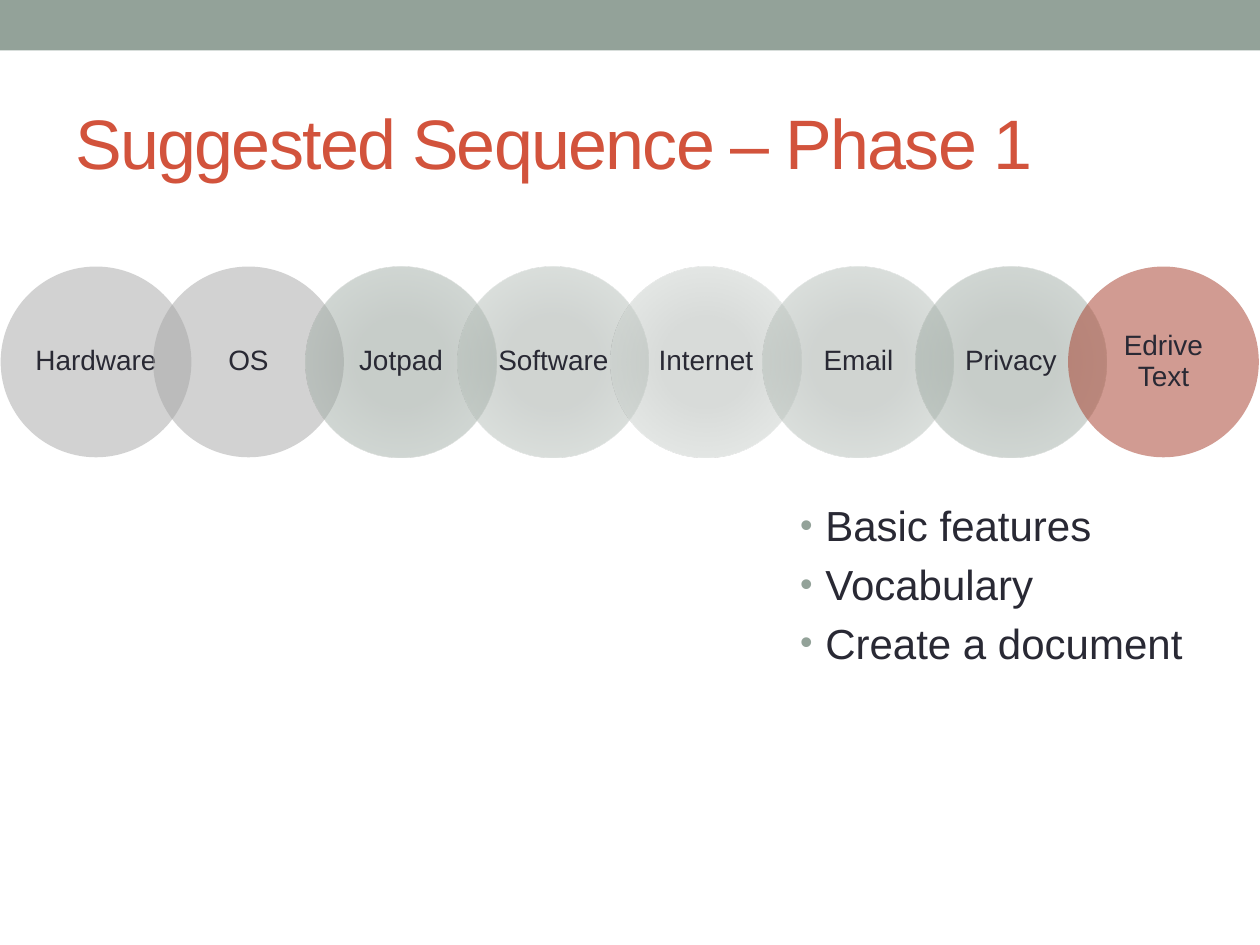
from dataclasses import dataclass

from pptx import Presentation
from pptx.dml.color import RGBColor
from pptx.enum.shapes import MSO_SHAPE
from pptx.enum.text import MSO_ANCHOR, PP_ALIGN
from pptx.oxml import parse_xml
from pptx.oxml.ns import nsdecls
from pptx.util import Pt


@dataclass(frozen=True)
class Theme:
    font: str = "Arial"
    title: str = "D2533C"
    text: str = "292934"
    sage: str = "93A299"
    gray: tuple = ("A6A6A6",)
    red: tuple = ("A53926",)
    # Radial gradients, from centre to rim
    dark: tuple = ("919D96", "929D96", "A3AFA8", "ACB5B0")
    medium: tuple = ("A3ACA6", "A3ABA6", "B6BFB9", "C0C7C2")
    light: tuple = ("B4BAB6", "B4BAB6", "C9CFCB", "D3D8D5")
    title_size: int = 40
    body_size: int = 24
    label_size: int = 16


theme = Theme()


def style_text(paragraph, size, color):
    for run in paragraph.runs:
        run.font.name = theme.font
        run.font.size = Pt(size)
        run.font.color.rgb = RGBColor.from_string(color)


def translucent_fill(colors):
    """Half-transparent fill: solid for one colour, radial for four."""
    tints = [f'<a:srgbClr val="{color}"><a:alpha val="50000"/></a:srgbClr>' for color in colors]
    if len(tints) == 1:
        return parse_xml(f'<a:solidFill {nsdecls("a")}>{tints[0]}</a:solidFill>')
    stops = "".join(f'<a:gs pos="{position * 1000}">{tint}</a:gs>'
                    for position, tint in zip((0, 34, 70, 100), tints))
    return parse_xml(
        f'<a:gradFill {nsdecls("a")} rotWithShape="1"><a:gsLst>{stops}</a:gsLst>'
        '<a:path path="circle"><a:fillToRect l="100000" t="100000" r="100000" b="100000"/>'
        '</a:path></a:gradFill>')


presentation = Presentation()
presentation.slide_width, presentation.slide_height = Pt(720), Pt(540)
slide = presentation.slides.add_slide(presentation.slide_layouts[1])

# Top band
band = slide.shapes.add_shape(MSO_SHAPE.RECTANGLE, 0, 0, Pt(720), Pt(28.8))
band.shadow.inherit = False
band.fill.solid()
band.fill.fore_color.rgb = RGBColor.from_string(theme.sage)
band.line.fill.background()

# Title
title = slide.shapes.title
title.left, title.top, title.width, title.height = Pt(36), Pt(41.76), Pt(648), Pt(77.76)
title.text_frame.text = "Suggested Sequence – Phase 1"
title.text_frame.vertical_anchor = MSO_ANCHOR.MIDDLE
heading = title.text_frame.paragraphs[0]
heading.alignment = PP_ALIGN.LEFT
style_text(heading, theme.title_size, theme.title)
heading.runs[0].font._element.set("spc", "-100")

# Chain of overlapping circles
steps = [
    ("Hardware", theme.gray),
    ("OS", theme.gray),
    ("Jotpad", theme.dark),
    ("Software", theme.medium),
    ("Internet", theme.light),
    ("Email", theme.medium),
    ("Privacy", theme.dark),
    ("Edrive Text", theme.red),
]
diameter, pitch = 109, 87.14
for index, (label, colors) in enumerate(steps):
    circle = slide.shapes.add_shape(MSO_SHAPE.OVAL, Pt(0.36 + index * pitch), Pt(152.3),
                                    Pt(diameter), Pt(diameter))
    circle.shadow.inherit = False
    circle.line.fill.background()
    circle._element.spPr.insert(2, translucent_fill(colors))
    frame = circle.text_frame
    frame.text = label
    frame.word_wrap = True
    frame.vertical_anchor = MSO_ANCHOR.MIDDLE
    frame.margin_left = frame.margin_right = Pt(0 if index == 0 else 6)
    frame.margin_top = frame.margin_bottom = Pt(1.6)
    caption = frame.paragraphs[0]
    caption.alignment = PP_ALIGN.CENTER
    caption.line_spacing = 0.9
    style_text(caption, theme.label_size, theme.text)

# Topics under the last step
topics = slide.placeholders[1]
topics.left, topics.top, topics.width, topics.height = Pt(450), Pt(282), Pt(318), Pt(174.2)
topics.text_frame.text = "Basic features\nVocabulary\nCreate a document"
for topic in topics.text_frame.paragraphs:
    style_text(topic, theme.body_size, theme.text)
    properties = topic._element.get_or_add_pPr()
    properties.set("marL", str(Pt(14.4)))
    properties.set("indent", str(-Pt(14.4)))
    for bullet in (f'<a:buClr {nsdecls("a")}><a:srgbClr val="{theme.sage}"/></a:buClr>',
                   f'<a:buSzPct {nsdecls("a")} val="85000"/>',
                   f'<a:buChar {nsdecls("a")} char="•"/>'):
        properties.append(parse_xml(bullet))

presentation.save("out.pptx")
